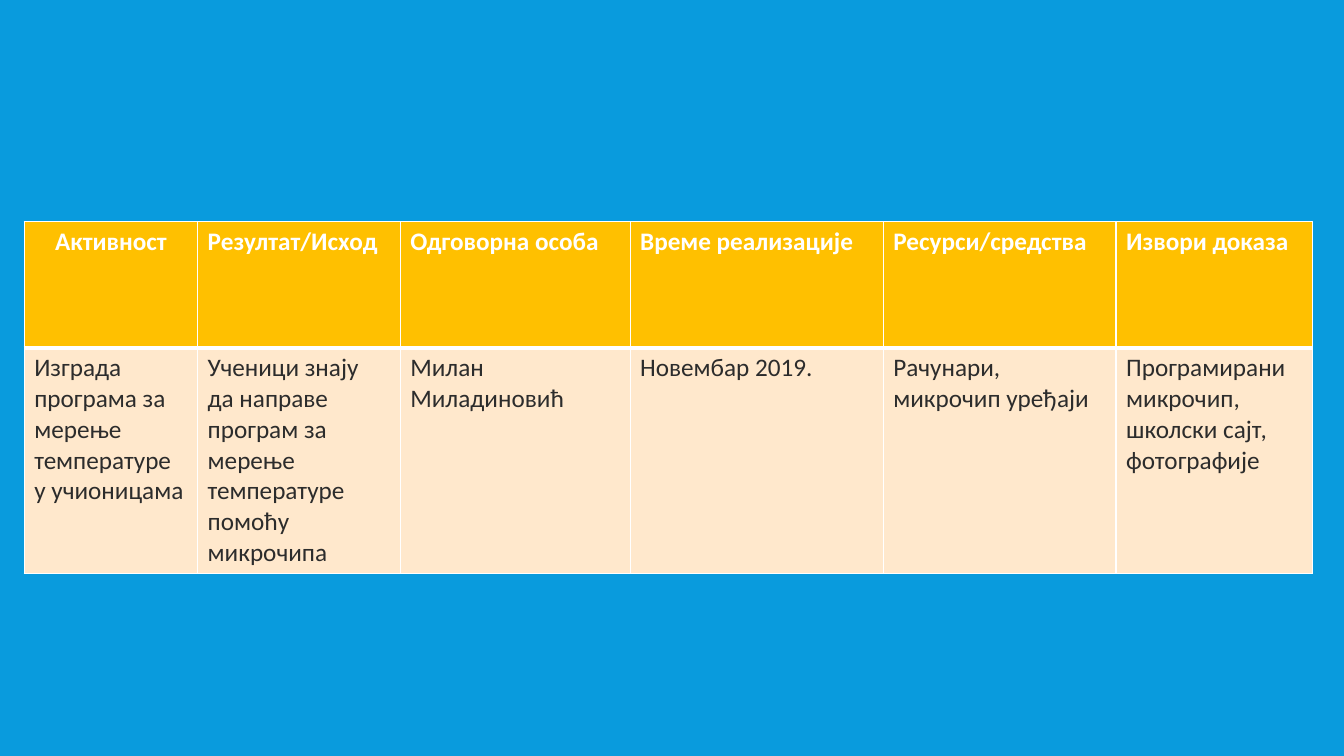
from dataclasses import dataclass

from lxml import etree
from pptx import Presentation
from pptx.dml.color import RGBColor
from pptx.enum.text import PP_ALIGN
from pptx.oxml.ns import qn
from pptx.slide import Slide
from pptx.table import _Cell
from pptx.util import Inches, Pt

CENTER = PP_ALIGN.CENTER
LEFT = PP_ALIGN.LEFT


@dataclass(frozen=True)
class Theme:
    font: str = "Calibri"
    size: int = 18
    background: str = "099BDD"
    border: str = "FFFFFF"
    thin: int = 1
    thick: int = 3


@dataclass(frozen=True)
class RowStyle:
    height: float
    fill: str
    ink: str
    bold: bool
    top: int
    bottom: int


@dataclass(frozen=True)
class PlanColumn:
    heading: str
    entry: str
    width: float
    heading_align: PP_ALIGN = LEFT


THEME = Theme()
HEADING_STYLE = RowStyle(1.25, "FFC000", "FFFFFF", True, THEME.thin, THEME.thick)
ENTRY_STYLE = RowStyle(2.2, "FFE8CC", "2C2C2C", False, THEME.thick, THEME.thin)
PLAN = [
    PlanColumn("Активност", "Изграда програма за мерење температуре у учионицама", 1.72, CENTER),
    PlanColumn("Резултат/Исход",
               "Ученици знају да направе програм за мерење температуре помоћу микрочипа", 2.01),
    PlanColumn("Одговорна особа", "Милан Миладиновић", 2.28),
    PlanColumn("Време реализације", "Новембар 2019.", 2.51),
    PlanColumn("Ресурси/средства", "Рачунари, микрочип уређаји", 2.31),
    PlanColumn("Извори доказа", "Програмирани микрочип, школски сајт, фотографије", 1.95),
]


def set_borders(cell: _Cell, style: RowStyle) -> None:
    properties = cell._tc.get_or_add_tcPr()
    widths = {"a:lnL": THEME.thin, "a:lnR": THEME.thin, "a:lnT": style.top, "a:lnB": style.bottom}
    for position, (side, width) in enumerate(widths.items()):
        line = etree.Element(qn(side), w=str(Pt(width)))
        fill = etree.SubElement(line, qn("a:solidFill"))
        etree.SubElement(fill, qn("a:srgbClr"), val=THEME.border)
        properties.insert(position, line)


def write_cell(cell: _Cell, text: str, style: RowStyle, align: PP_ALIGN) -> None:
    cell.fill.solid()
    cell.fill.fore_color.rgb = RGBColor.from_string(style.fill)
    set_borders(cell, style)
    cell.text_frame.text = text
    paragraph = cell.text_frame.paragraphs[0]
    paragraph.alignment = align
    font = paragraph.runs[0].font
    font.name = THEME.font
    font.size = Pt(THEME.size)
    font.bold = style.bold
    font.color.rgb = RGBColor.from_string(style.ink)


def add_plan(slide: Slide, plan: list[PlanColumn]) -> None:
    styles = (HEADING_STYLE, ENTRY_STYLE)
    width = sum(column.width for column in plan)
    height = sum(style.height for style in styles)
    table = slide.shapes.add_table(
        len(styles), len(plan), Inches(0.24), Inches(2.2), Inches(width), Inches(height)
    ).table
    table.horz_banding = False
    for row, style in zip(table.rows, styles):
        row.height = Inches(style.height)
    for index, column in enumerate(plan):
        table.columns[index].width = Inches(column.width)
        write_cell(table.cell(0, index), column.heading, HEADING_STYLE, column.heading_align)
        write_cell(table.cell(1, index), column.entry, ENTRY_STYLE, LEFT)


def main() -> None:
    presentation = Presentation()
    presentation.slide_width = Inches(13.33)
    presentation.slide_height = Inches(7.5)
    slide = presentation.slides.add_slide(presentation.slide_layouts[6])
    slide.background.fill.solid()
    slide.background.fill.fore_color.rgb = RGBColor.from_string(THEME.background)
    add_plan(slide, PLAN)
    presentation.save("out.pptx")


if __name__ == "__main__":
    main()
